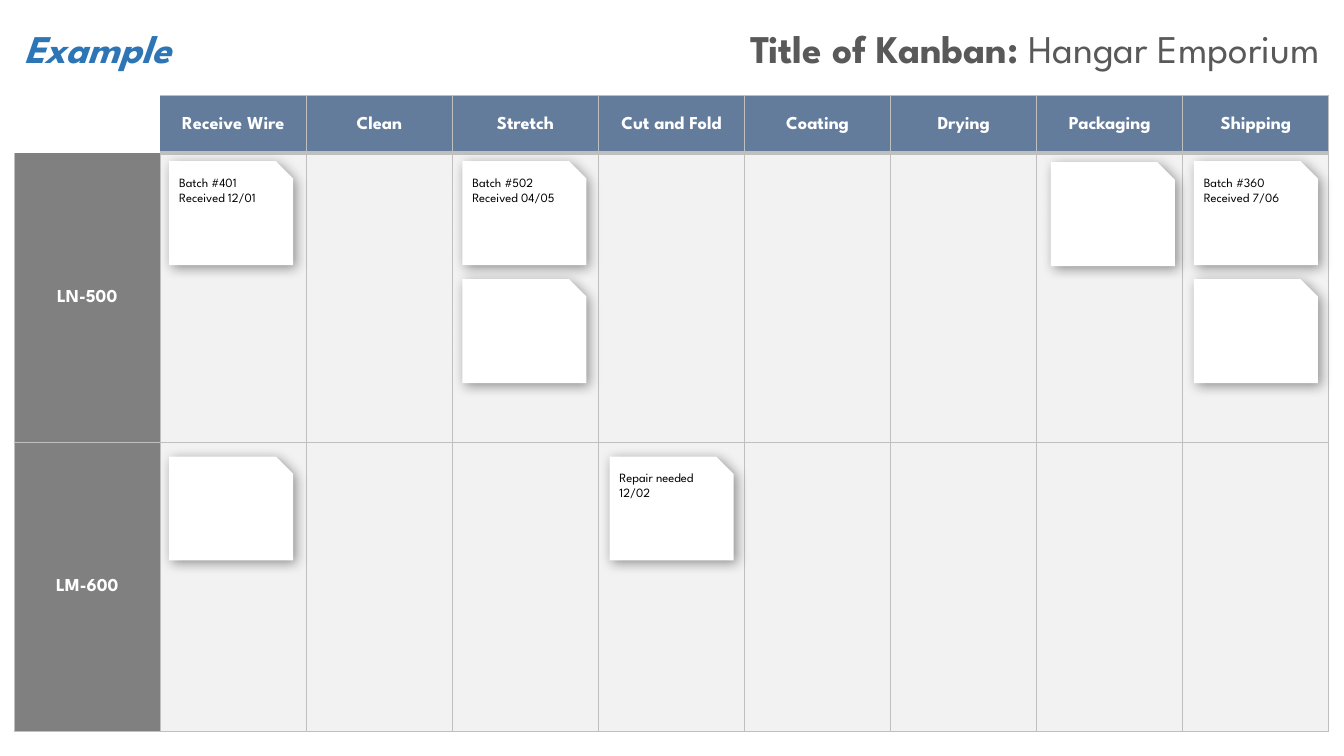
import pptx
import pptx.util
import pptx.dml.color
import pptx.enum.shapes
import pptx.enum.text
import pptx.oxml
import pptx.oxml.ns

Inches, Pt = pptx.util.Inches, pptx.util.Pt
ALIGN = pptx.enum.text.PP_ALIGN
ANCHOR = pptx.enum.text.MSO_ANCHOR
FONT = "League Spartan"
COLORS = {"white": "FFFFFF", "head": "647C9C", "side": "808080",
          "cell": "F2F2F2", "rule": "BFBFBF", "title": "595959",
          "blue": "2E75B6", "black": "000000"}

# Board grid, in inches
LEFT, TOP, WIDTH = 0.14, 0.95, 13.04
HEAD, ROW = 0.57, 2.87
STEPS = ["Receive Wire", "Clean", "Stretch", "Cut and Fold",
         "Coating", "Drying", "Packaging", "Shipping"]
LINES = ["LN-500", "LM-600"]
COL = WIDTH / (len(STEPS) + 1)

# Cards: column, row, offset in the cell, text
CARDS = [
    (1, 0, 0.09, 0.08, "Batch #401 Received 12/01"),
    (3, 0, 0.10, 0.08, "Batch #502 Received 04/05"),
    (8, 0, 0.11, 0.08, "Batch #360 Received 7/06"),
    (4, 1, 0.11, 0.14, "Repair needed 12/02"),
    (3, 0, 0.10, 1.25, ""),
    (8, 0, 0.11, 1.25, ""),
    (1, 1, 0.09, 0.14, ""),
    (7, 0, 0.14, 0.09, ""),
]


def tint(name):
    return pptx.dml.color.RGBColor.from_string(COLORS[name])


def style(font, size, color, bold=False, italic=False):
    font.name, font.size = FONT, Pt(size)
    font.bold, font.italic = bold, italic
    font.color.rgb = tint(color)


def make(xml):
    space = pptx.oxml.ns.nsdecls("a")
    return pptx.oxml.parse_xml(xml.replace(" ", f" {space} ", 1))


def edge(cell, side, width):
    fill = "<a:noFill/>"
    if width:
        fill = (f'<a:solidFill><a:srgbClr val="{COLORS["rule"]}"/>'
                "</a:solidFill>")
    cell._tc.get_or_add_tcPr().append(
        make(f'<a:ln{side} w="{Pt(width)}">{fill}</a:ln{side}>'))


def fill_cell(cell, row, col):
    # Edges next to the blank corner stay open
    corner = row == 0 and col == 0
    widths = {"L": 0 if row == 0 and col <= 1 else 1,
              "R": 0 if corner else 1,
              "T": 1, "B": 1}
    if row == 0:
        widths["B"] = 3
    if row == 1:
        widths["T"] = 3 if col else 0
    if corner:
        widths["T"] = widths["B"] = 0
    for side, width in widths.items():
        edge(cell, side, width)

    color, text = "cell", ""
    if corner:
        color = "white"
    elif row == 0:
        color, text = "head", STEPS[col - 1]
    elif col == 0:
        color, text = "side", LINES[row - 1]
    cell.fill.solid()
    cell.fill.fore_color.rgb = tint(color)
    cell.vertical_anchor = ANCHOR.MIDDLE
    cell.margin_left = cell.margin_right = cell.margin_top = Inches(0.01)
    cell.margin_bottom = 0
    para = cell.text_frame.paragraphs[0]
    para.text, para.alignment = text, ALIGN.CENTER
    style(para.font, 13, "white", bold=True)


def add_board(slide):
    rows, cols = len(LINES) + 1, len(STEPS) + 1
    table = slide.shapes.add_table(
        rows, cols, Inches(LEFT), Inches(TOP), Inches(WIDTH),
        Inches(HEAD + ROW * len(LINES))).table
    table.first_row = table.horz_banding = False
    for col in table.columns:
        col.width = Inches(COL)
    for row, line in enumerate(table.rows):
        line.height = Inches(ROW if row else HEAD)
        for col, cell in enumerate(line.cells):
            fill_cell(cell, row, col)


def add_card(slide, col, row, right, down, text):
    card = slide.shapes.add_shape(
        pptx.enum.shapes.MSO_SHAPE.SNIP_1_RECTANGLE,
        Inches(LEFT + col * COL + right),
        Inches(TOP + HEAD + row * ROW + down), Inches(1.23), Inches(1.03))
    card.fill.solid()
    card.fill.fore_color.rgb = tint("white")
    card.line.fill.background()
    # Soft shadow to the lower right
    card.shadow.inherit = False
    effects = card._element.spPr.find(pptx.oxml.ns.qn("a:effectLst"))
    effects.append(make(
        f'<a:outerShdw blurRad="{Pt(9)}" dist="{Pt(3)}" dir="2700000" '
        'algn="tl" rotWithShape="0">'
        f'<a:srgbClr val="{COLORS["black"]}"><a:alpha val="40000"/>'
        "</a:srgbClr></a:outerShdw>"))
    if text:
        card.text_frame.vertical_anchor = ANCHOR.TOP
        para = card.text_frame.paragraphs[0]
        para.text, para.alignment = text, ALIGN.LEFT
        style(para.font, 9, "black")


def set_label(shape, left, width, align, runs):
    shape.left, shape.top = Inches(left), Inches(0.19)
    shape.width, shape.height = Inches(width), Inches(0.57)
    frame = shape.text_frame
    frame.word_wrap = True
    frame.auto_size = pptx.enum.text.MSO_AUTO_SIZE.SHAPE_TO_FIT_TEXT
    frame.vertical_anchor = ANCHOR.TOP
    para = frame.paragraphs[0]
    para.alignment = align
    for text, color, bold, italic in runs:
        run = para.add_run()
        run.text = text
        style(run.font, 28, color, bold, italic)


def main():
    deck = pptx.Presentation()
    deck.slide_width, deck.slide_height = Inches(13.33), Inches(7.5)
    slide = deck.slides.add_slide(deck.slide_layouts.get_by_name("Title Only"))

    # Heading
    set_label(slide.shapes.title, 5.11, 8.08, ALIGN.RIGHT,
              [("Title of Kanban: ", "title", True, False),
               ("Hangar Emporium", "title", False, False)])
    set_label(slide.shapes.add_textbox(0, 0, 0, 0), LEFT, 2.6, ALIGN.LEFT,
              [("Example", "blue", True, True)])

    # Board and cards
    add_board(slide)
    for card in CARDS:
        add_card(slide, *card)
    deck.save("out.pptx")


if __name__ == "__main__":
    main()
